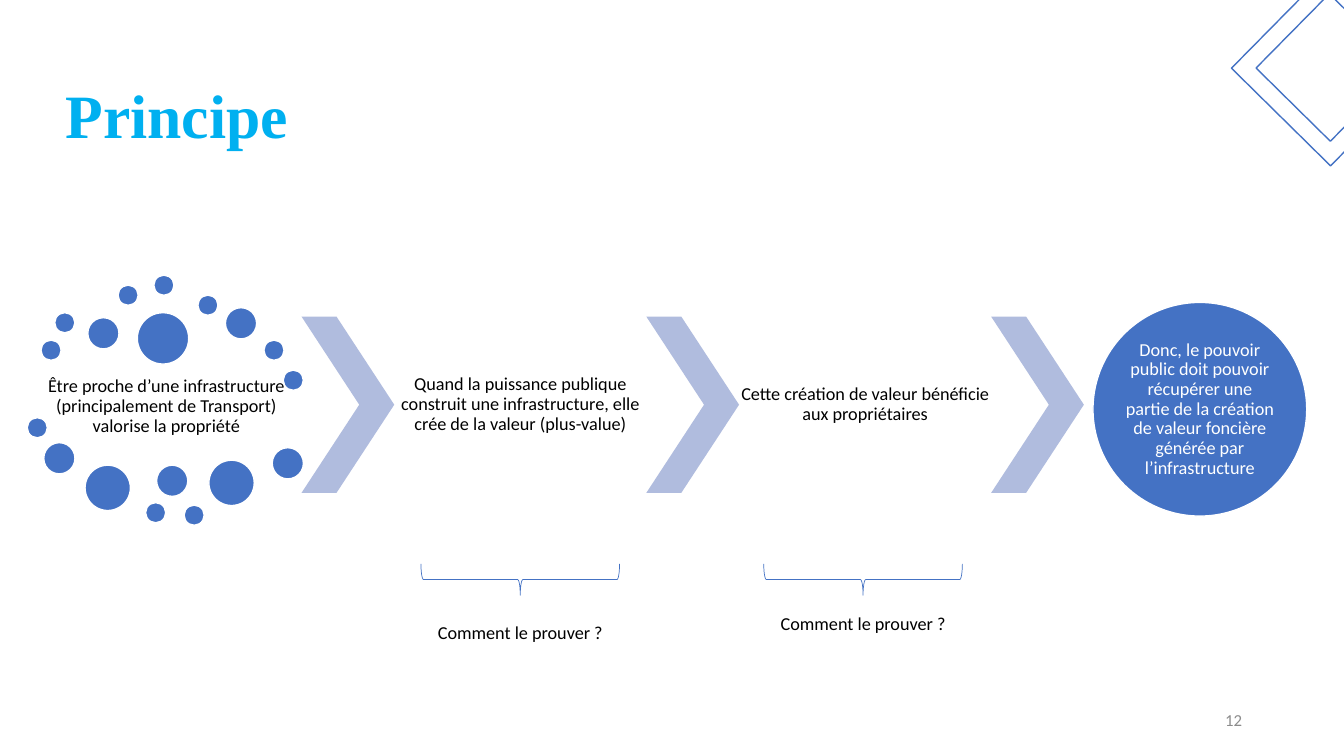
from pptx import Presentation
from pptx.dml.color import RGBColor
from pptx.enum.shapes import MSO_SHAPE
from pptx.enum.text import MSO_ANCHOR, MSO_AUTO_SIZE, PP_ALIGN
from pptx.util import Inches, Pt

ELLIPSE, CHEVRON = MSO_SHAPE.OVAL, MSO_SHAPE.CHEVRON
BRACE, FRAME = MSO_SHAPE.RIGHT_BRACE, MSO_SHAPE.FRAME
MIDDLE, NO_FIT = MSO_ANCHOR.MIDDLE, MSO_AUTO_SIZE.NONE
LEFT, CENTER, RIGHT = PP_ALIGN.LEFT, PP_ALIGN.CENTER, PP_ALIGN.RIGHT

COLORS = {"title": "00B0F0", "blue": "4472C4", "chevron": "B0BCDE",
          "text": "000000", "white": "FFFFFF", "number": "8C8C8C"}
SLIDE_W, SLIDE_H = 13.33, 7.5
TITLE_ONLY = 5

# The chain repeats a chevron followed by a text column
CHAIN_LEFT, CHAIN_TOP, CHAIN_H = 2.99, 3.14, 1.75
CHEVRON_W, STEP_W = 0.92, 2.5
PITCH = CHEVRON_W + STEP_W

PREMISE = ("Être proche d’une infrastructure (principalement de Transport) "
           "valorise la propriété")
# Each step: its text, the offset of its brace, the top of its question
STEPS = [
    ("Quand la puissance publique construit une infrastructure, "
     "elle crée de la valeur (plus-value)", 0, 5.43),
    ("Cette création de valeur bénéficie aux propriétaires", -0.02, 5.34),
]
QUESTION = "Comment le prouver ?"
CONCLUSION = ("Donc, le pouvoir public doit pouvoir récupérer une partie de la "
              "création de valeur foncière générée par l’infrastructure")

# Dot diameter in inches: corners as shares of the premise's box
DOTS = {
    0.2: [(0.05, 0.26), (0.10, 0.15), (0.33, 0.04), (0.46, 0), (0.62, 0.08),
          (0.86, 0.26), (0.93, 0.38), (0, 0.57), (0.43, 0.91), (0.57, 0.92)],
    0.31: [(0.22, 0.17), (0.72, 0.13), (0.06, 0.67), (0.47, 0.76), (0.89, 0.69)],
    0.45: [(0.21, 0.76), (0.66, 0.74)],
    0.51: [(0.40, 0.15)],
}


def color(name):
    return RGBColor.from_string(COLORS[name])


def inches(box):
    return [Inches(length) for length in box]


def format_text(frame, text, size, ink, align, font="Calibri", bold=False):
    frame.word_wrap = True
    frame.auto_size = NO_FIT
    frame.vertical_anchor = MIDDLE
    frame.text = text
    paragraph = frame.paragraphs[0]
    paragraph.alignment = align
    paragraph.line_spacing = 0.9
    style = paragraph.runs[0].font
    style.size, style.name, style.bold = Pt(size), font, bold
    style.color.rgb = color(ink)


def add_label(slide, box, text, ink="text", inset=0.02, size=13, align=CENTER):
    frame = slide.shapes.add_textbox(*inches(box)).text_frame
    frame.margin_left = frame.margin_right = Inches(inset)
    frame.margin_top = frame.margin_bottom = Inches(inset)
    format_text(frame, text, size, ink, align)


def add_figure(slide, kind, box, fill=None, line=None, width=1, rotation=0):
    figure = slide.shapes.add_shape(kind, *inches(box))
    figure.shadow.inherit = False
    figure.rotation = rotation
    if fill:
        figure.fill.solid()
        figure.fill.fore_color.rgb = color(fill)
    else:
        figure.fill.background()
    if line:
        figure.line.color.rgb = color(line)
        figure.line.width = Pt(width)
    else:
        figure.line.fill.background()
    return figure


def add_title(slide, box):
    title = slide.shapes.title
    title.left, title.top, title.width, title.height = inches(box)
    format_text(title.text_frame, "Principe", 44, "title", LEFT,
                "Times New Roman", True)


def add_premise(slide, box):
    left, top, width, height = box
    add_label(slide, (left + 0.05 * width, top + 0.36 * height,
                      0.91 * width, 0.33 * height), PREMISE)
    for diameter, corners in DOTS.items():
        for x, y in corners:
            add_figure(slide, ELLIPSE,
                       (left + x * width, top + y * height, diameter, diameter),
                       "blue", "white")


def add_chevron(slide, box):
    add_figure(slide, CHEVRON, box, "chevron").adjustments[0] = 0.623


def add_step(slide, box, text, brace_shift, question_top):
    left, top, width, height = box
    add_label(slide, box, text)
    center = left + width / 2 + brace_shift
    depth, span, brace_middle = 0.31, 1.97, 5.75
    add_figure(slide, BRACE,
               (center - depth / 2, brace_middle - span / 2, depth, span),
               line="blue", width=0.5, rotation=90)
    question_w = 2.44
    add_label(slide, (center - question_w / 2, question_top, question_w, 1.71),
              QUESTION)


def add_conclusion(slide, box):
    left, top, size, _ = box
    add_figure(slide, ELLIPSE, box, "blue", "white")
    margin = 0.31
    inner = size - 2 * margin
    add_label(slide, (left + margin, top + margin, inner, inner),
              CONCLUSION, "white", inset=0)


def add_principle_slide(prs):
    slide = prs.slides.add_slide(prs.slide_layouts[TITLE_ONLY])
    add_title(slide, (0.55, 0.45, 7.25, 1.45))
    add_label(slide, (9.42, 6.95, 2.92, 0.4), "12", "number", size=12, align=RIGHT)
    add_premise(slide, (0.27, 2.73, 2.73, 2.48))
    for index in range(len(STEPS) + 1):
        add_chevron(slide, (CHAIN_LEFT + index * PITCH, CHAIN_TOP,
                            CHEVRON_W, CHAIN_H))
    for index, step in enumerate(STEPS):
        add_step(slide, (CHAIN_LEFT + CHEVRON_W + index * PITCH, CHAIN_TOP,
                         STEP_W, CHAIN_H), *step)
    add_conclusion(slide, (10.84, 3, 2.12, 2.12))
    add_figure(slide, FRAME, (12.5, -0.02, 1.38, 1.38),
               line="blue", rotation=314.6)


def main():
    prs = Presentation()
    prs.slide_width, prs.slide_height = Inches(SLIDE_W), Inches(SLIDE_H)
    add_principle_slide(prs)
    prs.save("out.pptx")


if __name__ == "__main__":
    main()
